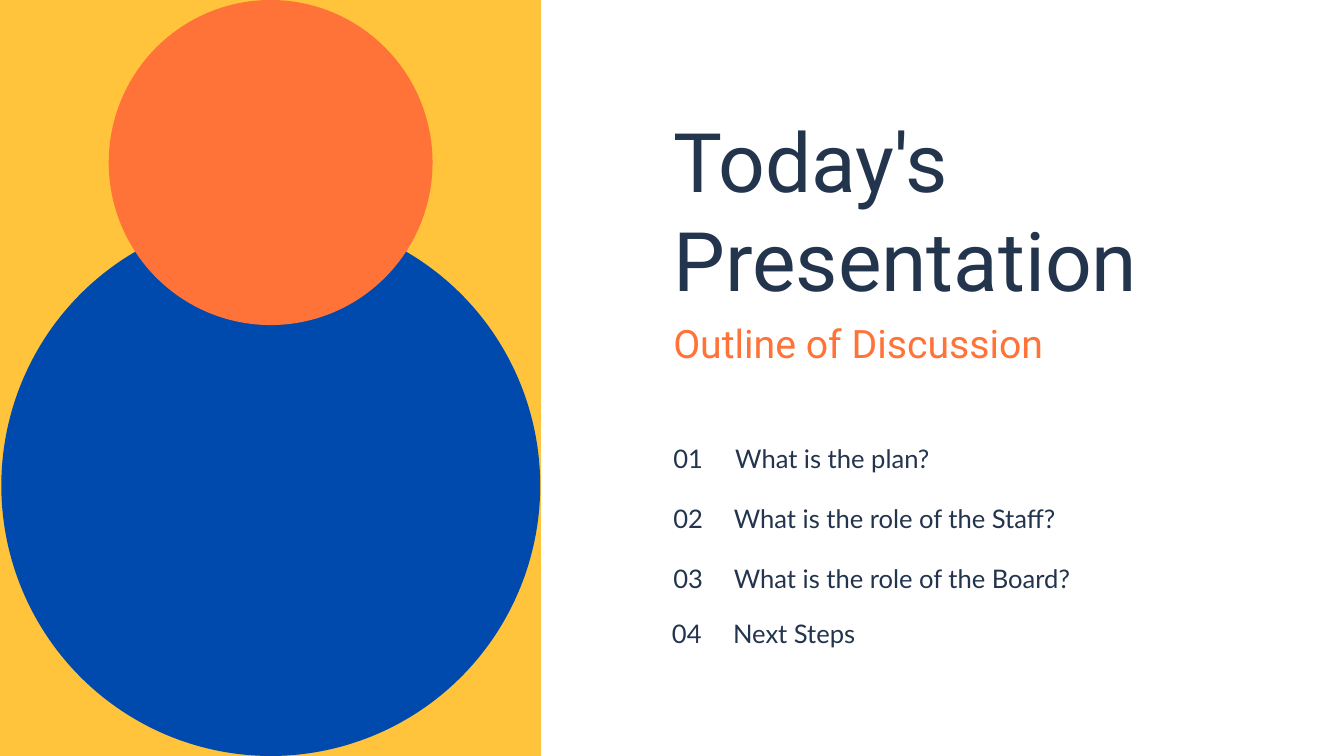
from typing import NamedTuple

from pptx import Presentation
from pptx.dml.color import RGBColor
from pptx.enum.shapes import MSO_SHAPE
from pptx.util import Cm, Pt

RECT = MSO_SHAPE.RECTANGLE
OVAL = MSO_SHAPE.OVAL

COLORS = {
    "navy": "23344D",
    "orange": "FF7338",
    "blue": "004AAD",
    "yellow": "FFC33C",
}


class Box(NamedTuple):
    left: float
    top: float
    width: float
    height: float


class Form(NamedTuple):
    kind: MSO_SHAPE
    box: Box
    color: str


class Item(NamedTuple):
    num: str
    text: str
    left: float
    text_left: float
    top: float


MARGIN = 25.45

# Side panel with its two circles, back to front
FORMS = [
    Form(RECT, Box(0, 0, 20.45, 28.58), "yellow"),
    Form(OVAL, Box(0.05, 8.13, 20.37, 20.45), "blue"),
    Form(OVAL, Box(4.11, 0, 12.24, 12.29), "orange"),
]

# Outline points
ITEMS = [
    Item("01", "What is the plan?", MARGIN, 27.79, 16.08),
    Item("02", "What is the role of the Staff?", MARGIN, 27.74, 18.36),
    Item("03", "What is the role of the Board?", MARGIN, 27.74, 20.62),
    Item("04", "Next Steps", 25.4, 27.71, 22.68),
]


def lengths(box: Box) -> list[Cm]:
    return [Cm(value) for value in box]


def add_form(slide, form: Form) -> None:
    shape = slide.shapes.add_shape(form.kind, *lengths(form.box))
    shape.shadow.inherit = False
    shape.fill.solid()
    shape.fill.fore_color.rgb = RGBColor.from_string(COLORS[form.color])
    shape.line.fill.background()


def add_text(slide, text: str, box: Box, *, size: float, pitch: float,
             font: str = "Lato", color: str = "navy") -> None:
    frame = slide.shapes.add_textbox(*lengths(box)).text_frame
    frame.word_wrap = True
    frame.margin_left = frame.margin_right = 0
    frame.margin_top = frame.margin_bottom = 0
    para = frame.paragraphs[0]
    para.line_spacing = Pt(pitch)
    run = para.add_run()
    run.text = text
    run.font.name = font
    run.font.size = Pt(size)
    run.font.color.rgb = RGBColor.from_string(COLORS[color])


def add_item(slide, item: Item) -> None:
    style = {"size": 27.4, "pitch": 51.8}
    add_text(slide, item.num, Box(item.left, item.top, 1.98, 1.5), **style)
    add_text(slide, item.text, Box(item.text_left, item.top, 19.18, 1.5), **style)


def main() -> None:
    deck = Presentation()
    deck.slide_width = Cm(50.8)
    deck.slide_height = Cm(28.58)
    slide = deck.slides.add_slide(deck.slide_layouts[6])

    for form in FORMS:
        add_form(slide, form)

    # Headings
    add_text(slide, "Today's Presentation", Box(MARGIN, 4.19, 22.5, 7.37),
             size=88, pitch=105.6, font="Roboto")
    add_text(slide, "Outline of Discussion", Box(MARGIN, 12.04, 22.5, 1.78),
             size=42, pitch=51.7, font="Roboto", color="orange")

    for item in ITEMS:
        add_item(slide, item)

    deck.save("out.pptx")


if __name__ == "__main__":
    main()
